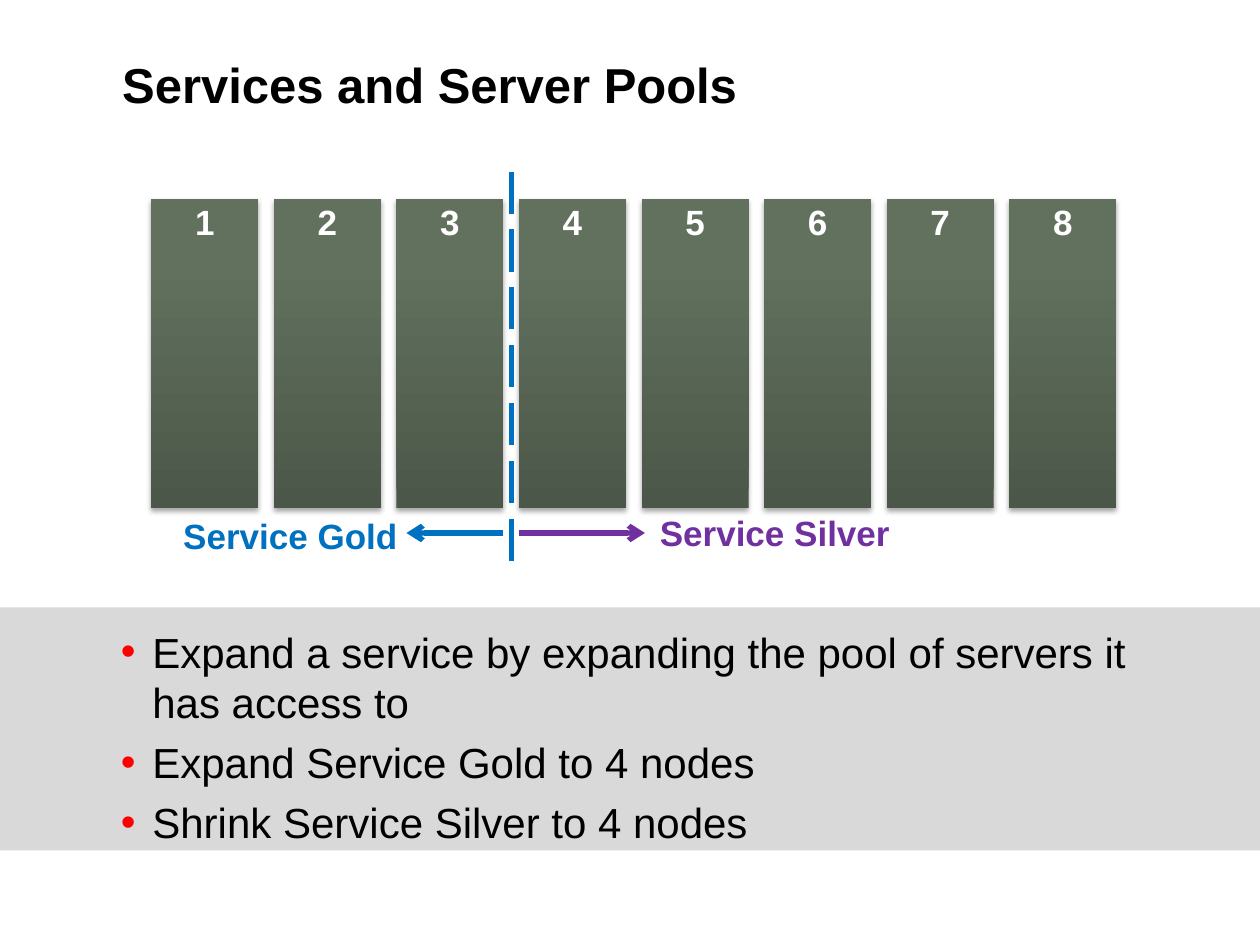
"""Build the slide on services and server pools."""
from pptx import Presentation, util as u
from pptx.dml.color import RGBColor
from pptx.enum import dml, shapes, text
from pptx.oxml import parse_xml
from pptx.oxml.ns import nsdecls, qn

BLACK = RGBColor(0x00, 0x00, 0x00)
WHITE = RGBColor(0xFF, 0xFF, 0xFF)
GREY = RGBColor(0xD9, 0xD9, 0xD9)
RED = RGBColor(0xFF, 0x00, 0x00)
GOLD_BLUE = RGBColor(0x00, 0x70, 0xC0)
SILVER_PURPLE = RGBColor(0x70, 0x30, 0xA0)
SERVER_STOPS = (
    (0, RGBColor(0x4B, 0x57, 0x48)),
    (80, RGBColor(0x62, 0x71, 0x5E)),
    (100, RGBColor(0x62, 0x72, 0x5E)),
)

WIDTH, HEIGHT = 10, 7.5
SERVERS, GOLD_SERVERS = 8, 3
GRID_LEFT, GRID_RIGHT, GRID_TOP = 1.2, 8.86, 1.58
SERVER_WIDTH, SERVER_HEIGHT = 0.85, 2.45
PITCH = (GRID_RIGHT - GRID_LEFT - SERVER_WIDTH) / (SERVERS - 1)
ARROW_Y = GRID_TOP + SERVER_HEIGHT + 0.2
BULLETS = (
    "Expand a service by expanding the pool of servers it has access to",
    "Expand Service Gold to 4 nodes",
    "Shrink Service Silver to 4 nodes",
)


def column_left(column):
    """Return the left edge of a server column, counted from zero."""
    return GRID_LEFT + column * PITCH


def box(left, top, width, height):
    """Return a frame in inches as slide lengths."""
    return [u.Inches(length) for length in (left, top, width, height)]


def xml(tag, attributes="", content=""):
    """Return a drawing element."""
    return parse_xml(f"<a:{tag} {nsdecls('a')} {attributes}>{content}</a:{tag}>")


def write(shape, lines, *, size, color, bold=False, align=text.PP_ALIGN.LEFT,
          indent=0, bullet=None, spacing=None, before=0):
    """Write paragraphs into a shape in one format."""
    frame = shape.text_frame
    frame.vertical_anchor = text.MSO_ANCHOR.TOP
    for index, line in enumerate(lines):
        paragraph = frame.paragraphs[0] if index == 0 else frame.add_paragraph()
        paragraph.text = line
        properties = paragraph._p.get_or_add_pPr()
        if indent:
            properties.set("marL", str(u.Inches(indent)))
            properties.set("indent", str(u.Inches(-indent)))
        if bullet:
            properties.append(xml("buClr", content=f'<a:srgbClr val="{RED}"/>'))
            properties.append(xml("buFont", 'typeface="Arial"'))
            properties.append(xml("buChar", f'char="{bullet}"'))
        paragraph.alignment = align
        if spacing:
            paragraph.line_spacing = spacing
        if index:
            paragraph.space_before = u.Pt(before)
        font = paragraph.runs[0].font
        font.name, font.size, font.bold = "Arial", u.Pt(size), bold
        font.color.rgb = color


def add_text(slide, frame, lines, **style):
    """Add a wrapping text box without insets."""
    shape = slide.shapes.add_textbox(*box(*frame))
    body = shape.text_frame
    body.word_wrap = True
    body.margin_left = body.margin_right = body.margin_top = body.margin_bottom = 0
    write(shape, lines, **style)


def add_label(slide, frame, label, color):
    """Add a service label that grows with its text."""
    shape = slide.shapes.add_textbox(*box(*frame))
    shape.text_frame.word_wrap = False
    shape.text_frame.auto_size = text.MSO_AUTO_SIZE.SHAPE_TO_FIT_TEXT
    write(shape, [label], size=20, color=color, bold=True,
          align=text.PP_ALIGN.CENTER, spacing=0.9)


def add_rectangle(slide, frame):
    """Add a rectangle without outline or shadow."""
    shape = slide.shapes.add_shape(shapes.MSO_SHAPE.RECTANGLE, *box(*frame))
    shape.shadow.inherit = False
    shape.line.fill.background()
    return shape


def add_server(slide, column):
    """Add a numbered server with a gradient and a soft shadow."""
    shape = add_rectangle(
        slide, (column_left(column), GRID_TOP, SERVER_WIDTH, SERVER_HEIGHT))
    stops = "".join(
        f'<a:gs pos="{share * 1000}"><a:srgbClr val="{color}"/></a:gs>'
        for share, color in SERVER_STOPS)
    properties = shape.element.spPr
    properties.find(qn("a:prstGeom")).addnext(xml(
        "gradFill", 'rotWithShape="1"',
        f'<a:gsLst>{stops}</a:gsLst><a:lin ang="16200000" scaled="0"/>'))
    properties.find(qn("a:effectLst")).append(xml(
        "outerShdw",
        f'blurRad="{u.Pt(3.1)}" dist="{u.Pt(1.8)}" dir="5400000" rotWithShape="0"',
        f'<a:srgbClr val="{BLACK}"><a:alpha val="35000"/></a:srgbClr>'))
    write(shape, [str(column + 1)], size=20, color=WHITE, bold=True,
          align=text.PP_ALIGN.CENTER, indent=0.13, spacing=0.9)


def add_line(slide, start, end, color, dash=None, arrow=False):
    """Add a straight line, dashed or with an arrowhead on request."""
    connector = slide.shapes.add_connector(
        shapes.MSO_CONNECTOR.STRAIGHT, *box(*start, *end))
    connector.line.color.rgb = color
    connector.line.width = u.Pt(3)
    if dash:
        connector.line.dash_style = dash
    properties = connector.element.spPr
    if arrow:
        properties.find(qn("a:ln")).append(xml("tailEnd", 'type="arrow"'))
    properties.append(xml("effectLst"))


def main():
    """Build and save the slide."""
    presentation = Presentation()
    presentation.slide_width = u.Inches(WIDTH)
    presentation.slide_height = u.Inches(HEIGHT)
    slide = presentation.slides.add_slide(presentation.slide_layouts[6])

    band = add_rectangle(slide, (0, 4.82, WIDTH, 1.93))
    band.fill.solid()
    band.fill.fore_color.rgb = GREY
    add_text(slide, (0.97, 0.43, 8.29, 0.94), ["Services and Server Pools"],
             size=28, color=BLACK, bold=True)
    add_text(slide, (0.96, 4.97, 8.24, 1.51), BULLETS, size=24, color=BLACK,
             indent=0.25, bullet="•", before=5.5)

    for column in range(SERVERS):
        add_server(slide, column)

    silver_left = column_left(GOLD_SERVERS)
    gold_right = column_left(GOLD_SERVERS - 1) + SERVER_WIDTH
    divider = (gold_right + silver_left) / 2
    add_line(slide, (divider, 4.45), (divider, 1.28), GOLD_BLUE,
             dash=dml.MSO_LINE.LONG_DASH)
    add_line(slide, (gold_right, ARROW_Y), (gold_right - 0.77, ARROW_Y),
             GOLD_BLUE, arrow=True)
    add_line(slide, (silver_left, ARROW_Y), (silver_left + 1, ARROW_Y),
             SILVER_PURPLE, arrow=True)
    add_label(slide, (1.35, 4.07, 1.91, 0.4), "Service Gold", GOLD_BLUE)
    add_label(slide, (5.13, 4.05, 2.04, 0.4), "Service Silver", SILVER_PURPLE)

    presentation.save("out.pptx")


if __name__ == "__main__":
    main()
